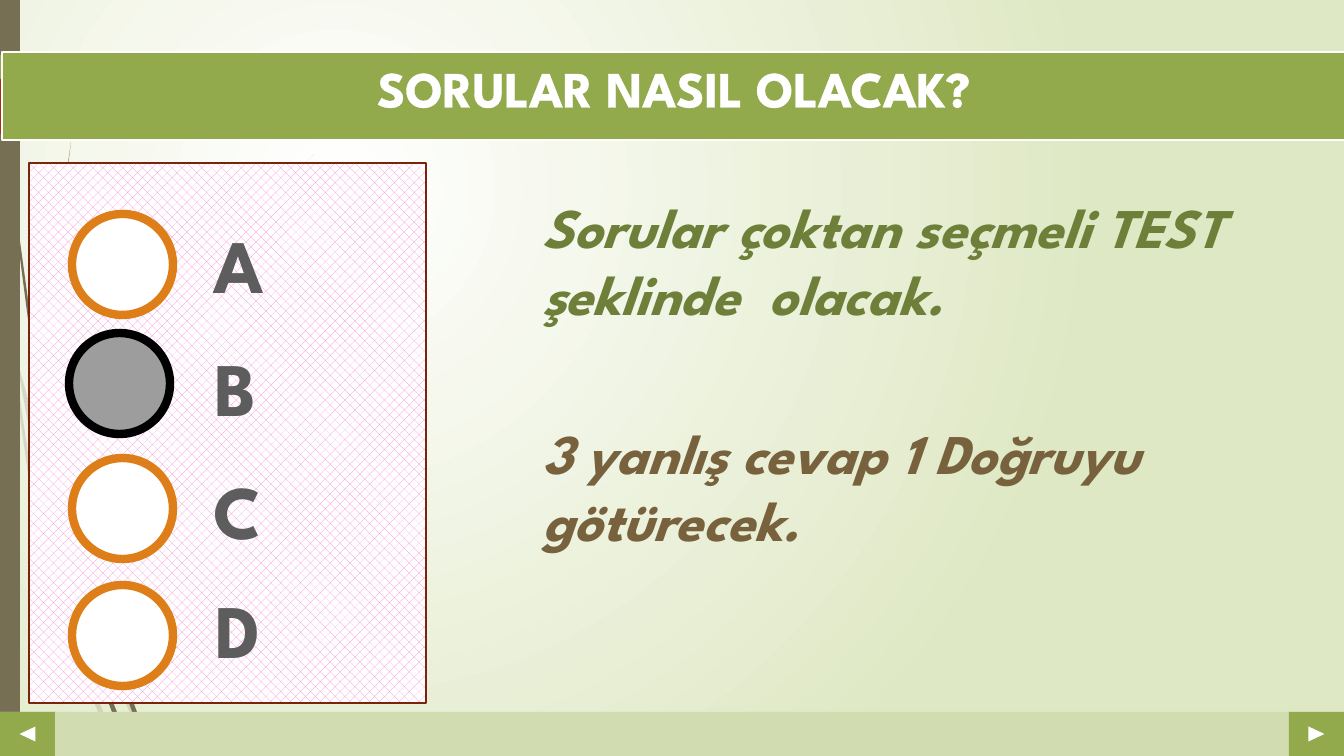
from dataclasses import dataclass

from lxml.etree import SubElement
from pptx import Presentation
from pptx.dml.color import RGBColor as RGB
from pptx.enum.dml import MSO_PATTERN as PATTERN
from pptx.enum.shapes import MSO_SHAPE as SHAPE
from pptx.enum.text import MSO_ANCHOR as ANCHOR, PP_ALIGN as ALIGN
from pptx.oxml.ns import qn
from pptx.util import Pt

SCALE = 914400 / 100.8
W, H = 1344, 756
BAR_H, NAV_W = 44, 55


def px(n):
    return round(n * SCALE)


@dataclass(frozen=True)
class Theme:
    font: str = "League Spartan"
    white: str = "FFFFFF"
    backdrop: str = "DFE8C4"
    green: str = "92AA4C"
    pale_green: str = "D1DDB0"
    dark_green: str = "6D7F39"
    taupe: str = "766F54"
    brown: str = "77623D"
    red: str = "A53010"
    dark_red: str = "7A240C"
    pink: str = "FB85D4"
    orange: str = "DE7E18"
    black: str = "000000"
    mark: str = "9D9D9D"
    letter: str = "5D5D5D"
    title_pt: int = 36
    body_pt: int = 40
    letter_pt: int = 54


class Deck:
    def __init__(self, theme):
        self.t = theme
        self.prs = Presentation()
        self.prs.slide_width, self.prs.slide_height = px(W), px(H)
        self.s = self.prs.slides.add_slide(self.prs.slide_layouts[5])

    def background(self, inner, outer):
        fill = self.s.background.fill
        fill.gradient()
        for stop, color in zip(fill.gradient_stops, (inner, outer)):
            stop.color.rgb = RGB.from_string(color)
        grad = self.s.element.find(".//" + qn("a:gradFill"))
        grad.remove(grad.find(qn("a:lin")))
        circle = SubElement(grad, qn("a:path"), path="circle")
        SubElement(circle, qn("a:fillToRect"), l="50000", t="50000", r="100000", b="100000")

    def paint(self, sp, fill, line=None, width=0):
        sp.fill.solid()
        sp.fill.fore_color.rgb = RGB.from_string(fill)
        if line:
            sp.line.color.rgb = RGB.from_string(line)
            sp.line.width = Pt(width)
        else:
            sp.line.fill.background()

    def shape(self, kind, box, fill, line=None, width=0, rotation=0):
        sp = self.s.shapes.add_shape(kind, *map(px, box))
        sp.shadow.inherit = False
        sp.rotation = rotation
        self.paint(sp, fill, line, width)
        return sp

    def stem(self, points, alpha=100):
        builder = self.s.shapes.build_freeform(*points[0], scale=SCALE)
        builder.add_line_segments(points[1:], close=True)
        sp = builder.convert_to_shape()
        sp.shadow.inherit = False
        self.paint(sp, self.t.taupe)
        if alpha < 100:
            color = sp.element.spPr.find(".//" + qn("a:srgbClr"))
            SubElement(color, qn("a:alpha"), val=str(alpha * 1000))

    def set_text(self, sp, text, size, color, align=ALIGN.LEFT, italic=False, outline=False, **frame):
        tf = sp.text_frame
        for name, value in frame.items():
            setattr(tf, name, value)
        p = tf.paragraphs[0]
        p.alignment = align
        r = p.add_run()
        r.text = text
        style = {"name": self.t.font, "size": Pt(size), "bold": True, "italic": italic}
        for name, value in style.items():
            setattr(r.font, name, value)
        r.font.color.rgb = RGB.from_string(color)
        if outline:
            rPr = r._r.get_or_add_rPr()
            ln = SubElement(rPr, qn("a:ln"), w=str(Pt(1.4)))
            SubElement(SubElement(ln, qn("a:solidFill")), qn("a:srgbClr"), val=self.t.white)
            rPr.insert(0, ln)

    def text(self, box, text, size, color, **options):
        sp = self.s.shapes.add_textbox(*map(px, box))
        self.set_text(sp, text, size, color, **options)

    def title(self, box, text):
        sp = self.s.shapes.title
        self.s.shapes.element.append(sp.element)
        sp.left, sp.top, sp.width, sp.height = map(px, box)
        self.paint(sp, self.t.green, self.t.white, 1.75)
        self.set_text(sp, text, self.t.title_pt, self.t.white, align=ALIGN.CENTER,
                      outline=True, vertical_anchor=ANCHOR.TOP, word_wrap=True)


# Grass stems, outlined in px
PALE_STEMS = [
    [(14, 348), (17, 379), (31, 473), (53, 575), (94, 688), (120, 756),
     (115, 756), (93, 699), (66, 626), (28, 474), (11, 353)],
    [(14, 348), (29, 428), (58, 526), (85, 604), (124, 700), (151, 756),
     (156, 756), (128, 698), (93, 612), (62, 524)],
    [(86, 590), (108, 465), (159, 351), (230, 246), (270, 199), (314, 154),
     (270, 200), (231, 247), (161, 352), (111, 466), (89, 600)],
]
DARK_STEMS = [
    [(3, 0), (7, 111), (17, 235), (33, 358), (57, 485), (55, 457),
     (36, 358), (19, 234), (8, 110), (4, 0)],
    [(60, 476), (54, 352), (58, 247), (71, 142), (56, 247), (52, 352), (55, 453)],
    [(57, 481), (69, 561), (94, 664), (118, 728), (128, 755), (134, 755),
     (111, 697), (99, 662), (73, 560), (65, 509)],
    [(60, 476), (89, 597), (133, 714), (153, 755), (158, 755), (137, 712), (94, 595)],
]


def main():
    t = Theme()
    d = Deck(t)
    d.background(t.white, t.backdrop)

    # Grass and left strip
    for points in PALE_STEMS:
        d.stem(points, alpha=20)
    for points in DARK_STEMS:
        d.stem(points)
    d.shape(SHAPE.RECTANGLE, (0, 0, 20, H), t.taupe)

    # Bottom bar with an arrow at each end
    top = H - BAR_H
    d.shape(SHAPE.RECTANGLE, (0, top, W, BAR_H), t.pale_green)
    for left, rotation in ((0, 270), (W - NAV_W, 90)):
        d.shape(SHAPE.RECTANGLE, (left, top, NAV_W, BAR_H), t.green)
        d.shape(SHAPE.ISOSCELES_TRIANGLE, (left + 20, top + 14, 15, 16), t.white, rotation=rotation)

    # Title band and the tab behind it
    d.shape(SHAPE.RECTANGLE, (0, 55, 61, 74), t.green)
    d.shape(SHAPE.PENTAGON, (0, 79, 175, 55), t.red)

    # Answer panel
    panel = d.shape(SHAPE.RECTANGLE, (29, 163, 397, 540), t.white, t.dark_red, 1.25)
    panel.fill.patterned()
    panel.fill.pattern = PATTERN.PERCENT_30
    panel.fill.fore_color.rgb = RGB.from_string(t.pink)
    panel.fill.back_color.rgb = RGB.from_string(t.white)

    d.title((2, 52, W, 88), "SORULAR NASIL OLACAK?")

    # Answer choices: letter, circle left and top, letter top and width
    choices = [("A", 72, 214, 213, 68), ("B", 69, 333, 336, 64),
               ("C", 72, 458, 459, 64), ("D", 72, 585, 578, 69)]
    for letter, left, circle_top, letter_top, width in choices:
        fill, line = (t.mark, t.black) if letter == "B" else (t.white, t.orange)
        d.shape(SHAPE.OVAL, (left, circle_top, 101, 101), fill, line, 6)
        d.text((204, letter_top, width, 102), letter, t.letter_pt, t.letter,
               align=ALIGN.CENTER, outline=True, word_wrap=False)

    # Exam rules
    rules = [(185, "Sorular çoktan seçmeli TEST şeklinde  olacak.", t.dark_green),
             (411, "3 yanlış cevap 1 Doğruyu götürecek.", t.brown)]
    for rule_top, text, color in rules:
        d.text((529, rule_top, 715, 149), text, t.body_pt, color, italic=True,
               word_wrap=True, vertical_anchor=ANCHOR.MIDDLE, margin_left=px(13),
               margin_right=px(13), margin_top=px(7), margin_bottom=px(7))

    d.prs.save("out.pptx")


if __name__ == "__main__":
    main()
